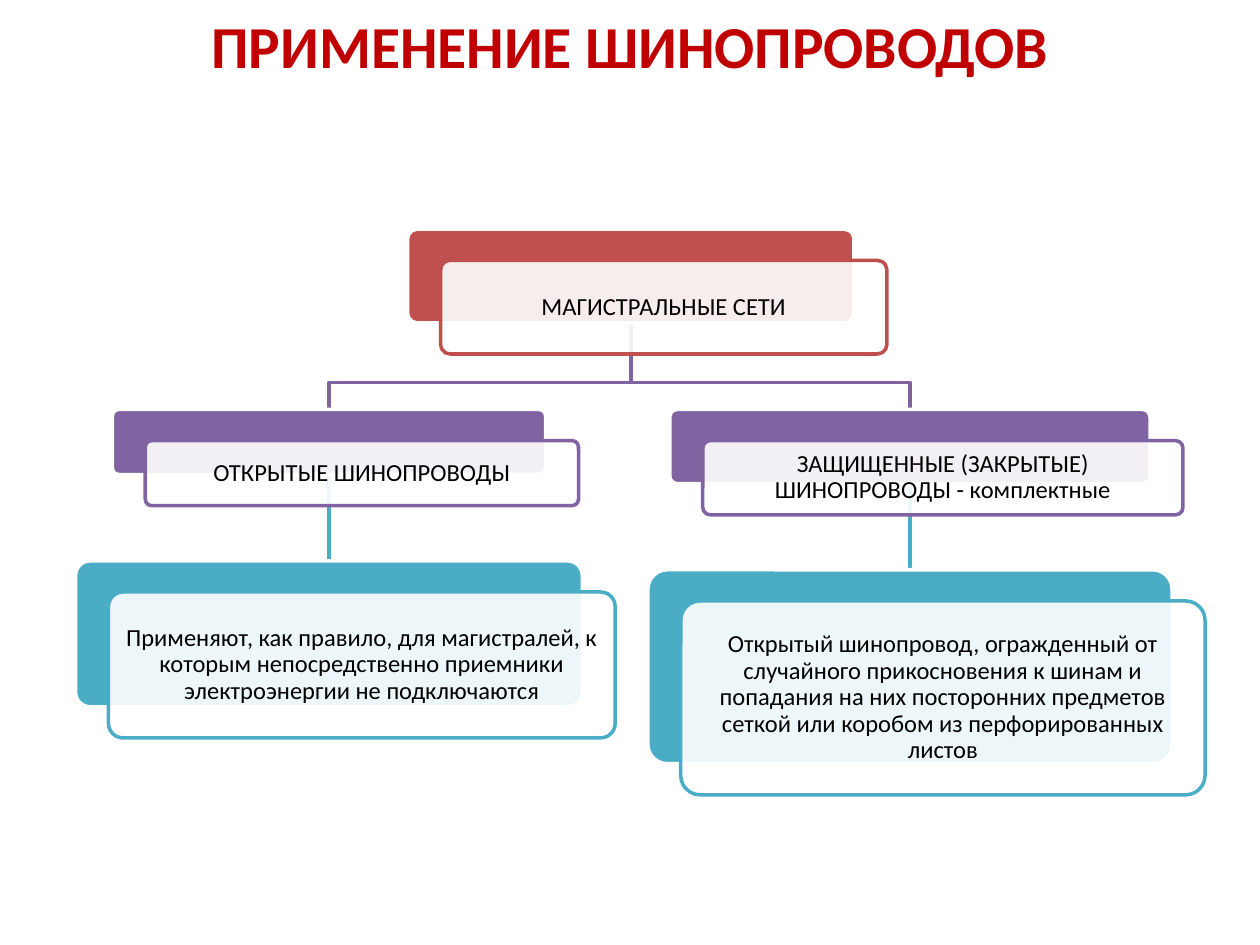
from dataclasses import dataclass

from lxml import etree
from pptx import Presentation
from pptx.dml.color import RGBColor
from pptx.enum.shapes import MSO_CONNECTOR, MSO_SHAPE
from pptx.enum.text import MSO_ANCHOR, PP_ALIGN
from pptx.oxml.ns import qn
from pptx.util import Pt

ROUNDED = MSO_SHAPE.ROUNDED_RECTANGLE
STRAIGHT = MSO_CONNECTOR.STRAIGHT
MIDDLE = MSO_ANCHOR.MIDDLE
CENTER = PP_ALIGN.CENTER
BOTTOM_SITE, TOP_SITE = 2, 0

FONT = "Calibri"
RED, PURPLE, TEAL = "C0504D", "8064A2", "4BACC6"
WHITE, BLACK, TITLE_RED = "FFFFFF", "000000", "C00000"
SHIFT_X, SHIFT_Y = 18.8, 17.8
ELBOW_RISE = 15.5
LINE_WIDTH = 2


@dataclass(frozen=True)
class Card:
    center: float
    top: float
    width: float
    height: float
    color: str
    text: str

    @property
    def left(self) -> float:
        return self.center - self.width / 2

    @property
    def bottom(self) -> float:
        return self.top + self.height


@dataclass(frozen=True)
class Branch:
    kind: Card
    detail: Card


ROOT = Card(360.5, 131, 255, 53.5, RED, "МАГИСТРАЛЬНЫЕ СЕТИ")
BRANCHES = (
    Branch(
        Card(188, 234, 247.6, 37.2, PURPLE, "ОТКРЫТЫЕ ШИНОПРОВОДЫ"),
        Card(188, 320.5, 289.6, 83.4, TEAL,
             "Применяют, как правило, для магистралей, к которым "
             "непосредственно приемники электроэнергии не подключаются"),
    ),
    Branch(
        Card(520, 234, 274.4, 42.4, PURPLE,
             "ЗАЩИЩЕННЫЕ (ЗАКРЫТЫЕ) ШИНОПРОВОДЫ - комплектные"),
        Card(520, 325.6, 299.6, 110.8, TEAL,
             "Открытый шинопровод, огражденный от случайного прикосновения "
             "к шинам и попадания на них посторонних предметов сеткой или "
             "коробом из перфорированных листов"),
    ),
)


def rgb(value: str) -> RGBColor:
    return RGBColor.from_string(value)


def style_font(font, size: float, color: str, bold: bool = False) -> None:
    font.name = FONT
    font.size = Pt(size)
    font.bold = bold
    font.color.rgb = rgb(color)


def style_line(shape, color: str) -> None:
    shape.line.color.rgb = rgb(color)
    shape.line.width = Pt(LINE_WIDTH)


def add_title(page, text: str) -> None:
    title = page.shapes.title
    title.left, title.top, title.width, title.height = Pt(36), Pt(21.6), Pt(648), Pt(61.2)
    frame = title.text_frame
    frame.text = text
    frame.vertical_anchor = MIDDLE
    paragraph = frame.paragraphs[0]
    paragraph.alignment = CENTER
    for span in paragraph.runs:
        style_font(span.font, 34, TITLE_RED, bold=True)


def add_elbow(page, parent: Card, child: Card) -> None:
    turn = child.top - ELBOW_RISE
    builder = page.shapes.build_freeform(Pt(parent.center), Pt(parent.bottom))
    builder.add_line_segments(
        [(Pt(parent.center), Pt(turn)), (Pt(child.center), Pt(turn)),
         (Pt(child.center), Pt(child.top))],
        close=False,
    )
    elbow = builder.convert_to_shape()
    elbow.shadow.inherit = False
    elbow.fill.background()
    style_line(elbow, child.color)


def add_stem(page, parent: Card, child: Card):
    stem = page.shapes.add_connector(
        STRAIGHT, Pt(parent.center), Pt(parent.bottom), Pt(child.center), Pt(child.top))
    style_line(stem, child.color)
    etree.SubElement(stem._element.spPr, qn("a:effectLst"))
    return stem


def add_plate(page, card: Card, shift_x: float, shift_y: float, fill: str, line: str):
    plate = page.shapes.add_shape(
        ROUNDED, Pt(card.left + shift_x), Pt(card.top + shift_y),
        Pt(card.width), Pt(card.height))
    plate.adjustments[0] = 0.1
    plate.shadow.inherit = False
    plate.fill.solid()
    plate.fill.fore_color.rgb = rgb(fill)
    style_line(plate, line)
    return plate


def add_card(page, card: Card):
    back = add_plate(page, card, 0, 0, card.color, WHITE)
    front = add_plate(page, card, SHIFT_X, SHIFT_Y, WHITE, card.color)
    fill_color = front.fill._xPr.find(qn("a:solidFill"))[0]
    etree.SubElement(fill_color, qn("a:alpha"), val="90000")
    frame = front.text_frame
    frame.word_wrap = True
    frame.vertical_anchor = MIDDLE
    frame.margin_left = frame.margin_right = Pt(4.2)
    frame.margin_top = frame.margin_bottom = Pt(4.2)
    frame.text = card.text
    paragraph = frame.paragraphs[0]
    paragraph.alignment = CENTER
    paragraph.line_spacing = 0.9
    style_font(paragraph.runs[0].font, 14, BLACK)
    return back


def main() -> None:
    deck = Presentation()
    deck.slide_width, deck.slide_height = Pt(720), Pt(540)
    page = deck.slides.add_slide(deck.slide_layouts[5])
    add_title(page, "ПРИМЕНЕНИЕ ШИНОПРОВОДОВ\v")

    stems = []
    for branch in BRANCHES:
        stems.append(add_stem(page, branch.kind, branch.detail))
        add_elbow(page, ROOT, branch.kind)

    add_card(page, ROOT)
    for branch, stem in zip(BRANCHES, stems):
        stem.begin_connect(add_card(page, branch.kind), BOTTOM_SITE)
        stem.end_connect(add_card(page, branch.detail), TOP_SITE)

    deck.save("out.pptx")


if __name__ == "__main__":
    main()
